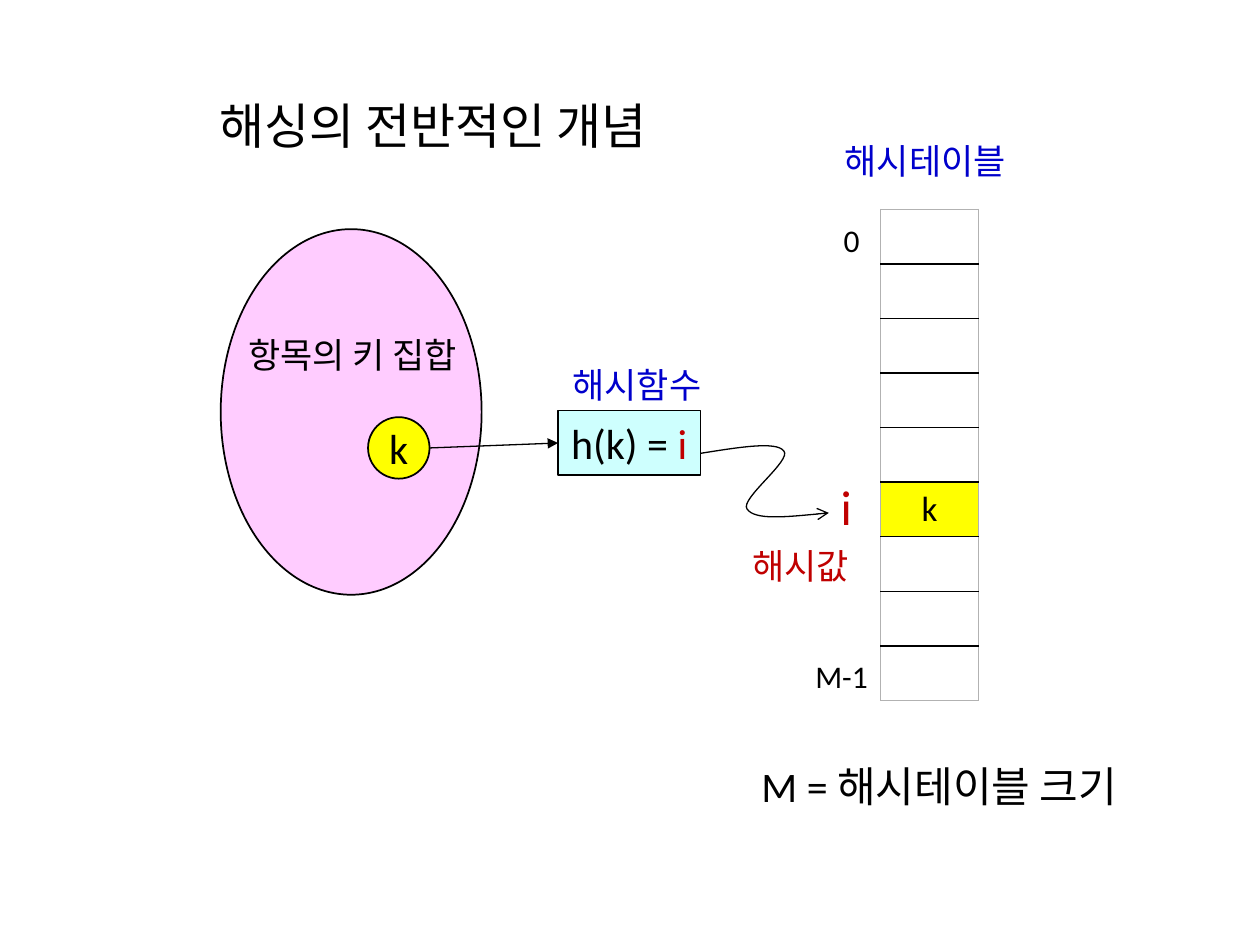
from dataclasses import dataclass

from lxml import etree
from pptx import Presentation
from pptx import util as u
from pptx.dml.color import RGBColor
from pptx.enum import shapes, text
from pptx.oxml import ns

LATIN, HANGUL = "Calibri", "Noto Sans CJK KR"
BLACK, BLUE, RED = "000000", "0000CC", "C00000"
PINK, YELLOW, CYAN, GREY = "FFCCFF", "FFFF00", "CEFFFE", "B2B2B2"
ROWS, KEY_ROW = 9, 5
CENTER, LEFT = text.PP_ALIGN.CENTER, text.PP_ALIGN.LEFT


@dataclass
class Label:
    words: str
    x: float
    y: float
    w: float
    h: float
    size: float
    color: str = BLACK
    font: str = LATIN
    align: text.PP_ALIGN = CENTER


@dataclass
class Node:
    kind: shapes.MSO_SHAPE
    x: float
    y: float
    w: float
    h: float
    fill: str
    line: float
    runs: tuple = ()


TITLE = Label("해싱의 전반적인 개념", 4.17, 1.8, 9.93, 1.45, 28, align=LEFT)
LABELS = [
    Label("해시함수", 11.15, 7.19, 3.38, 1.12, 20, BLUE, HANGUL),
    Label("i", 16.69, 9.47, 0.74, 1.45, 28, RED),
    Label("항목의 키 집합", 4.47, 6.58, 5.28, 1.12, 20, font=HANGUL),
    Label("해시테이블", 16.61, 2.67, 4.09, 1.12, 20, BLUE, HANGUL),
    Label("0", 16.61, 4.32, 1.12, 1.02, 18),
    Label("M-1", 15.9, 13.11, 2.13, 1.02, 18),
    Label("해시값", 14.76, 10.85, 2.77, 1.12, 20, RED, HANGUL),
    Label(" M = 해시테이블 크기", 14.91, 15.21, 8.43, 1.27, 24, align=LEFT),
]
KEY_SET = Node(shapes.MSO_SHAPE.OVAL, 4.45, 4.62, 5.26, 7.37, PINK, 1)
KEY = Node(shapes.MSO_SHAPE.OVAL, 7.42, 8.41, 1.24, 1.24, YELLOW, 1,
           (("k", BLACK),))
HASH = Node(shapes.MSO_SHAPE.RECTANGLE, 11.25, 8.28, 2.87, 1.3, CYAN, 0.75,
            (("h(k) = ", BLACK), ("i", RED)))
# Start point, then two control points and an end point per curve
CURVE = [(14.12, 9.14),
         (14.88, 9.02), (15.65, 8.89), (15.8, 9.09),
         (15.98, 9.27), (14.91, 10.06), (15.06, 10.26),
         (15.21, 10.49), (15.98, 10.41), (16.71, 10.34)]


def rgb(value: str) -> RGBColor:
    return RGBColor.from_string(value)


def set_font(p, size: float, font: str = LATIN, color: str = BLACK) -> None:
    """Format a paragraph, with a Hangul face for every run."""
    p.font.size, p.font.name = u.Pt(size), font
    p.font.color.rgb = rgb(color)
    for r in p.runs:
        r_pr = r._r.get_or_add_rPr()
        etree.SubElement(r_pr, ns.qn("a:ea"), typeface=HANGUL)


def set_line(sp, width: float) -> None:
    sp.line.color.rgb = rgb(BLACK)
    sp.line.width = u.Pt(width)


def add_arrowhead(sp, kind: str) -> None:
    etree.SubElement(sp.line._get_or_add_ln(), ns.qn("a:tailEnd"), type=kind)


def fill_label(sp, label: Label) -> None:
    sp.left, sp.top = u.Cm(label.x), u.Cm(label.y)
    sp.width, sp.height = u.Cm(label.w), u.Cm(label.h)
    tf = sp.text_frame
    tf.text = label.words
    tf.word_wrap = label.align == LEFT
    tf.vertical_anchor = text.MSO_ANCHOR.MIDDLE
    p = tf.paragraphs[0]
    p.alignment = label.align
    set_font(p, label.size, label.font, label.color)


def add_node(s, node: Node) -> None:
    sp = s.shapes.add_shape(node.kind, u.Cm(node.x), u.Cm(node.y),
                            u.Cm(node.w), u.Cm(node.h))
    sp.shadow.inherit = False
    sp.fill.solid()
    sp.fill.fore_color.rgb = rgb(node.fill)
    set_line(sp, node.line)
    tf = sp.text_frame
    tf.word_wrap = False
    p = tf.paragraphs[0]
    p.alignment = CENTER
    for words, color in node.runs:
        r = p.add_run()
        r.text = words
        r.font.color.rgb = rgb(color)
    set_font(p, 24)


def add_link(s, start: Node, end: Node) -> None:
    """Join the right side of one node to the left side of another."""
    link = s.shapes.add_connector(
        shapes.MSO_CONNECTOR.STRAIGHT,
        u.Cm(start.x + start.w), u.Cm(start.y + start.h / 2),
        u.Cm(end.x), u.Cm(end.y + end.h / 2))
    set_line(link, 0.75)
    add_arrowhead(link, "triangle")
    etree.SubElement(link._element.spPr, ns.qn("a:effectLst"))


def add_curve(s) -> None:
    """Draw straight segments, then merge each three into a Bezier curve."""
    points = [(u.Cm(x), u.Cm(y)) for x, y in CURVE]
    builder = s.shapes.build_freeform(*points[0])
    builder.add_line_segments(points[1:], close=False)
    sp = builder.convert_to_shape()
    sp.shadow.inherit = False
    sp.fill.background()
    set_line(sp, 0.75)
    add_arrowhead(sp, "arrow")
    segments = list(sp._element.iter(ns.qn("a:lnTo")))
    for i in range(0, len(segments), 3):
        outline = segments[i].getparent()
        bezier = etree.SubElement(outline, ns.qn("a:cubicBezTo"))
        for segment in segments[i:i + 3]:
            bezier.append(segment[0])
            outline.remove(segment)


def set_borders(cell, row: int) -> None:
    """Rule black lines between rows and a thin grey frame around them."""
    inner, frame = (BLACK, 1), (GREY, 0.5)
    sides = {"a:lnL": frame, "a:lnR": frame,
             "a:lnT": inner if row else frame,
             "a:lnB": inner if row < ROWS - 1 else frame}
    tc_pr = cell._tc.get_or_add_tcPr()
    for i, (side, (color, width)) in enumerate(sides.items()):
        ln = etree.Element(ns.qn(side), w=str(u.Pt(width)))
        fill = etree.SubElement(ln, ns.qn("a:solidFill"))
        etree.SubElement(fill, ns.qn("a:srgbClr"), val=color)
        tc_pr.insert(i, ln)


def add_hash_table(s) -> None:
    table = s.shapes.add_table(ROWS, 1, u.Cm(17.75), u.Cm(4.22),
                               u.Cm(1.98), u.Cm(1.1 * ROWS)).table
    table.first_row = table.horz_banding = False
    for row in range(ROWS):
        cell = table.cell(row, 0)
        cell.margin_top = cell.margin_bottom = 0
        cell.vertical_anchor = text.MSO_ANCHOR.MIDDLE
        cell.fill.background()
        if row == KEY_ROW:
            cell.fill.solid()
            cell.fill.fore_color.rgb = rgb(YELLOW)
            cell.text = "k"
            p = cell.text_frame.paragraphs[0]
            p.alignment = CENTER
            set_font(p, 20)
        set_borders(cell, row)


def main() -> None:
    prs = Presentation()
    prs.slide_width, prs.slide_height = u.Cm(25.4), u.Cm(19.05)
    s = prs.slides.add_slide(prs.slide_layouts[5])
    fill_label(s.shapes.title, TITLE)
    for node in (KEY_SET, KEY, HASH):
        add_node(s, node)
    add_link(s, KEY, HASH)
    add_curve(s)
    add_hash_table(s)
    for label in LABELS:
        fill_label(s.shapes.add_textbox(0, 0, 0, 0), label)
    prs.save("out.pptx")


if __name__ == "__main__":
    main()
